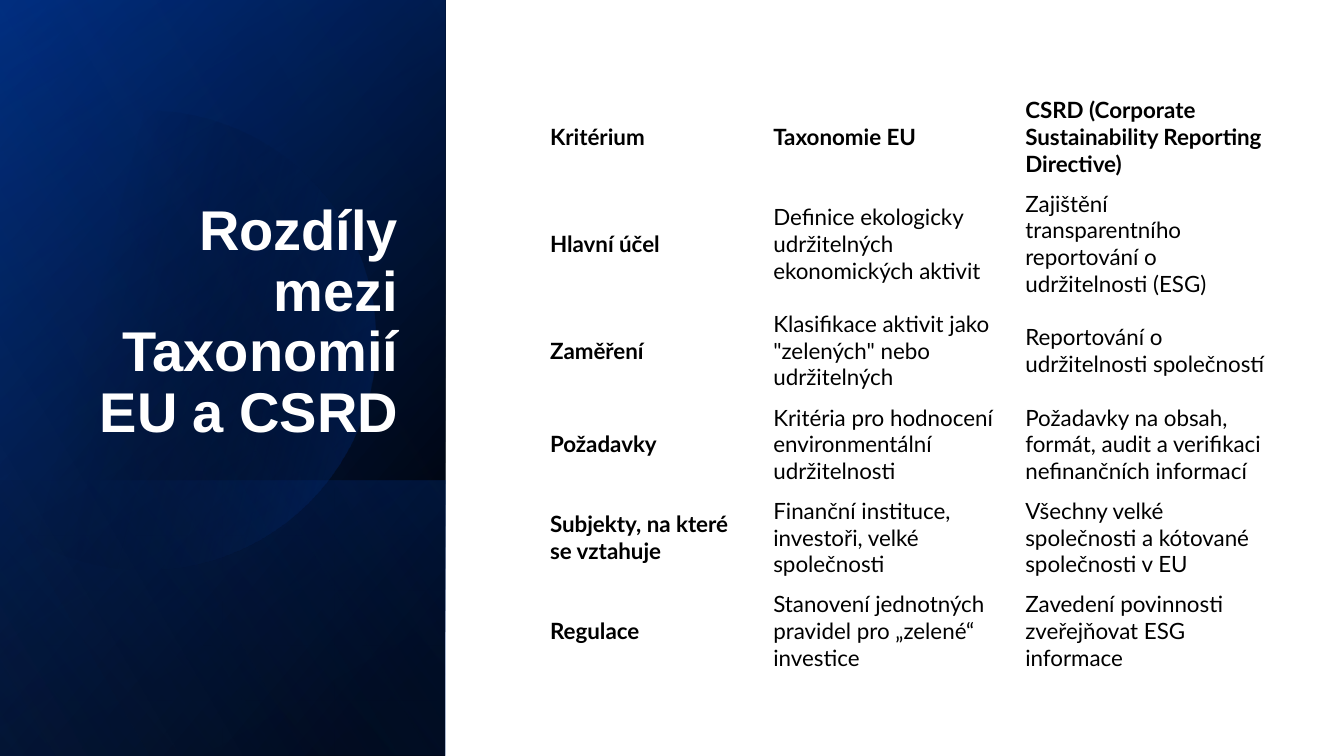
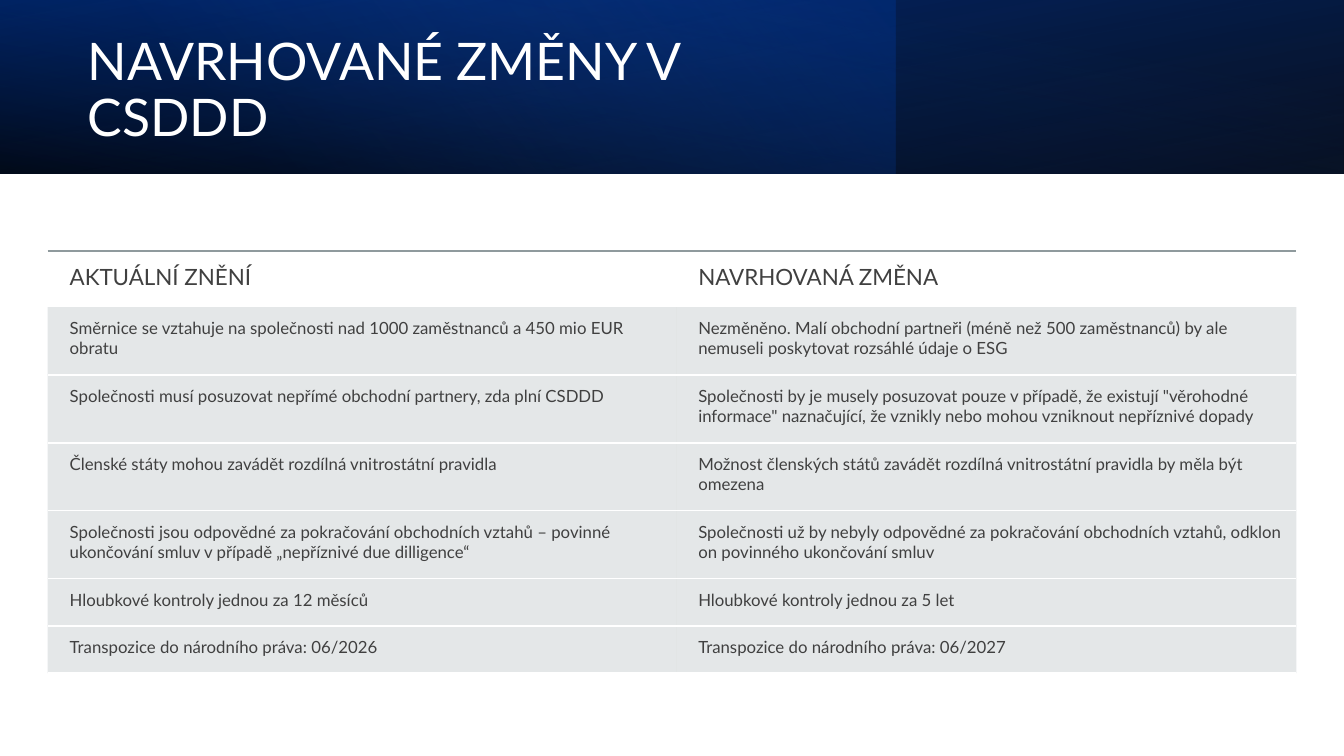
from math import cos, radians, sin

from lxml import etree
from pptx import Presentation
from pptx.dml.color import RGBColor
from pptx.enum.shapes import MSO_SHAPE as SHAPE
from pptx.enum.text import MSO_ANCHOR as ANCHOR, PP_ALIGN as ALIGN
from pptx.oxml.ns import qn
from pptx.util import Pt

BLACK = RGBColor(0x00, 0x00, 0x00)
WHITE = RGBColor(0xFF, 0xFF, 0xFF)
NAVY = RGBColor(0x00, 0x28, 0x6F)
BLUE = RGBColor(0x00, 0x35, 0x94)
BRIGHT = RGBColor(0x26, 0x74, 0xFF)
INK = RGBColor(0x40, 0x40, 0x40)
RULE = RGBColor(0x8F, 0x9A, 0x9D)
ROW = RGBColor(0xB4, 0xBC, 0xBE)

PLAIN_TABLE = "{2D5ABB26-0587-4C30-8999-92F81FD0307C}"
SANS, BODY = "Arial", "Lato"

CRITERIA = [
    ("Kritérium", "Taxonomie EU", "CSRD (Corporate Sustainability Reporting Directive)"),
    ("Hlavní účel", "Definice ekologicky udržitelných ekonomických aktivit",
     "Zajištění transparentního reportování o udržitelnosti (ESG)"),
    ("Zaměření", "Klasifikace aktivit jako \"zelených\" nebo udržitelných",
     "Reportování o udržitelnosti společností"),
    ("Požadavky", "Kritéria pro hodnocení environmentální udržitelnosti",
     "Požadavky na obsah, formát, audit a verifikaci nefinančních informací"),
    ("Subjekty, na které se vztahuje", "Finanční instituce, investoři, velké společnosti",
     "Všechny velké společnosti a kótované společnosti v EU"),
    ("Regulace", "Stanovení jednotných pravidel pro „zelené“ investice",
     "Zavedení povinnosti zveřejňovat ESG informace"),
]

CHANGES = [
    ("AKTUÁLNÍ ZNĚNÍ", "NAVRHOVANÁ ZMĚNA"),
    ("Směrnice se vztahuje na společnosti nad 1000 zaměstnanců a 450 mio EUR obratu",
     "Nezměněno. Malí obchodní partneři (méně než 500 zaměstnanců) by ale nemuseli "
     "poskytovat rozsáhlé údaje o ESG"),
    ("Společnosti musí posuzovat nepřímé obchodní partnery, zda plní CSDDD",
     "Společnosti by je musely posuzovat pouze v případě, že existují \"věrohodné informace\" "
     "naznačující, že vznikly nebo mohou vzniknout nepříznivé dopady"),
    ("Členské státy mohou zavádět rozdílná vnitrostátní pravidla",
     "Možnost členských států zavádět rozdílná vnitrostátní pravidla by měla být omezena"),
    ("Společnosti jsou odpovědné za pokračování obchodních vztahů – povinné ukončování smluv "
     "v případě „nepříznivé due dilligence“",
     "Společnosti už by nebyly odpovědné za pokračování obchodních vztahů, odklon on povinného "
     "ukončování smluv"),
    ("Hloubkové kontroly jednou za 12 měsíců", "Hloubkové kontroly jednou za 5 let"),
    ("Transpozice do národního práva: 06/2026", "Transpozice do národního práva: 06/2027"),
]


def add_color(parent, color, alpha=100):
    clr = etree.SubElement(parent, qn("a:srgbClr"), val=str(color))
    if alpha < 100:
        etree.SubElement(clr, qn("a:alpha"), val=str(alpha * 1000))


class Deck:
    def __init__(self, width, height):
        self.prs = Presentation()
        self.prs.slide_width, self.prs.slide_height = Pt(width), Pt(height)
        self.s = None

    def slide(self):
        self.s = self.prs.slides.add_slide(self.prs.slide_layouts[6])

    def add_text(self, tf, text, color, spacing=None, align=ALIGN.LEFT, **fmt):
        p = tf.paragraphs[0]
        p.alignment = align
        if spacing:
            p.line_spacing = spacing
        r = p.add_run()
        r.text = text
        for name, value in fmt.items():
            setattr(r.font, name, value)
        r.font.color.rgb = color

    def title(self, text, box, anchor, **fmt):
        tf = self.s.shapes.add_textbox(*map(Pt, box)).text_frame
        tf.word_wrap = True
        tf.vertical_anchor = anchor
        self.add_text(tf, text, WHITE, spacing=0.9, **fmt)

    def gradient(self, sp, stops, angle):
        sp.shadow.inherit = False
        sp.line.fill.background()
        sp.fill.background()
        grad = etree.Element(qn("a:gradFill"), rotWithShape="1")
        gs_list = etree.SubElement(grad, qn("a:gsLst"))
        for pos, color, alpha in stops:
            gs = etree.SubElement(gs_list, qn("a:gs"), pos=str(pos * 1000))
            add_color(gs, color, alpha)
        etree.SubElement(grad, qn("a:lin"), ang=str(angle * 60000), scaled="0")
        props = sp._element.spPr
        props.replace(props.find(qn("a:noFill")), grad)

    def band(self, box, stops, angle):
        sp = self.s.shapes.add_shape(SHAPE.RECTANGLE, *map(Pt, box))
        self.gradient(sp, stops, angle)

    def cut_circle(self, cx, cy, radius, reach, stops, angle):
        points = [(Pt(cx + radius * cos(radians(a))), Pt(cy + radius * sin(radians(a))))
                  for a in range(-reach, reach + 1, 3)]
        fb = self.s.shapes.build_freeform(*points[0])
        fb.add_line_segments(points[1:], close=True)
        self.gradient(fb.convert_to_shape(), stops, angle)

    def table(self, rows, left, top, widths, heights, style):
        frame = self.s.shapes.add_table(len(rows), len(widths), Pt(left), Pt(top),
                                        Pt(sum(widths)), Pt(sum(heights)))
        tbl = frame.table
        tbl.first_row = tbl.horz_banding = False
        tbl._tbl.tblPr.find(qn("a:tableStyleId")).text = PLAIN_TABLE
        for col, width in zip(tbl.columns, widths):
            col.width = Pt(width)
        for i, (row, height) in enumerate(zip(rows, heights)):
            tbl.rows[i].height = Pt(height)
            for j, text in enumerate(row):
                style(tbl.cell(i, j), text, i, j)

    def criterion_cell(self, cell, text, i, j):
        cell.fill.background()
        cell.vertical_anchor = ANCHOR.MIDDLE
        self.add_text(cell.text_frame, text, BLACK, name=BODY, size=Pt(16),
                      bold=i == 0 or j == 0)

    def change_cell(self, cell, text, i, j):
        head = i == 0
        pad = Pt(9.4 if head else 7.9)
        cell.margin_left = Pt(15.8)
        cell.margin_right = cell.margin_top = cell.margin_bottom = pad
        self.add_text(cell.text_frame, text, INK, name=BODY, size=Pt(16 if head else 12))
        if head:
            cell.fill.background()
            self.border(cell, "a:lnT", RULE, 60)
        else:
            cell.fill.solid()
            cell.fill.fore_color.rgb = ROW
            clr = cell._tc.tcPr.find(".//" + qn("a:srgbClr"))
            etree.SubElement(clr, qn("a:alpha"), val="35000")
            self.border(cell, "a:lnB", WHITE)

    def border(self, cell, tag, color, alpha=100):
        ln = etree.Element(qn(tag), w=str(Pt(1.5)))
        add_color(etree.SubElement(ln, qn("a:solidFill")), color, alpha)
        cell._tc.tcPr.insert(0, ln)


def differences(deck):
    deck.slide()
    panel = (0, 0, 318, 540)
    deck.band(panel, [(8, BLACK, 100), (100, NAVY, 100)], 220)
    deck.band(panel, [(0, BLACK, 0), (99, BLUE, 46)], 240)
    deck.band((0, 343, 318, 197), [(2, BLUE, 29), (100, BLACK, 30)], 140)
    deck.cut_circle(104, 243, 164, 129, [(29, BLACK, 0), (100, BLUE, 43)], 14)
    deck.band(panel, [(0, BLACK, 0), (99, BRIGHT, 11)], 150)
    deck.title("Rozdíly mezi Taxonomií EU a CSRD", (46, 132.5, 245.5, 188.5), ANCHOR.BOTTOM,
               align=ALIGN.RIGHT, name=SANS, size=Pt(40), bold=True)
    deck.table(CRITERIA, 385.7, 64.3, (159.5, 180, 186), (67, 85.5, 67, 67, 66.5, 66.5),
               deck.criterion_cell)


def proposals(deck):
    deck.slide()
    header = (0, 0, 960, 124)
    deck.band(header, [(0, BLACK, 96), (100, NAVY, 100)], 260)
    deck.band((0, 0, 640, 124), [(0, BLUE, 41), (74, BRIGHT, 0)], 140)
    deck.band(header, [(0, BLACK, 63), (78, BLUE, 15)], 280)
    deck.title("NAVRHOVANÉ ZMĚNY V CSDDD", (55.7, 19.5, 556, 91.5), ANCHOR.MIDDLE,
               name=BODY, size=Pt(37))
    deck.table(CHANGES, 34, 179, (449, 443), (40.3, *[48.5] * 4, 33.8, 33.8),
               deck.change_cell)


def main():
    deck = Deck(960, 540)
    differences(deck)
    proposals(deck)
    deck.prs.save("out.pptx")


if __name__ == "__main__":
    main()
